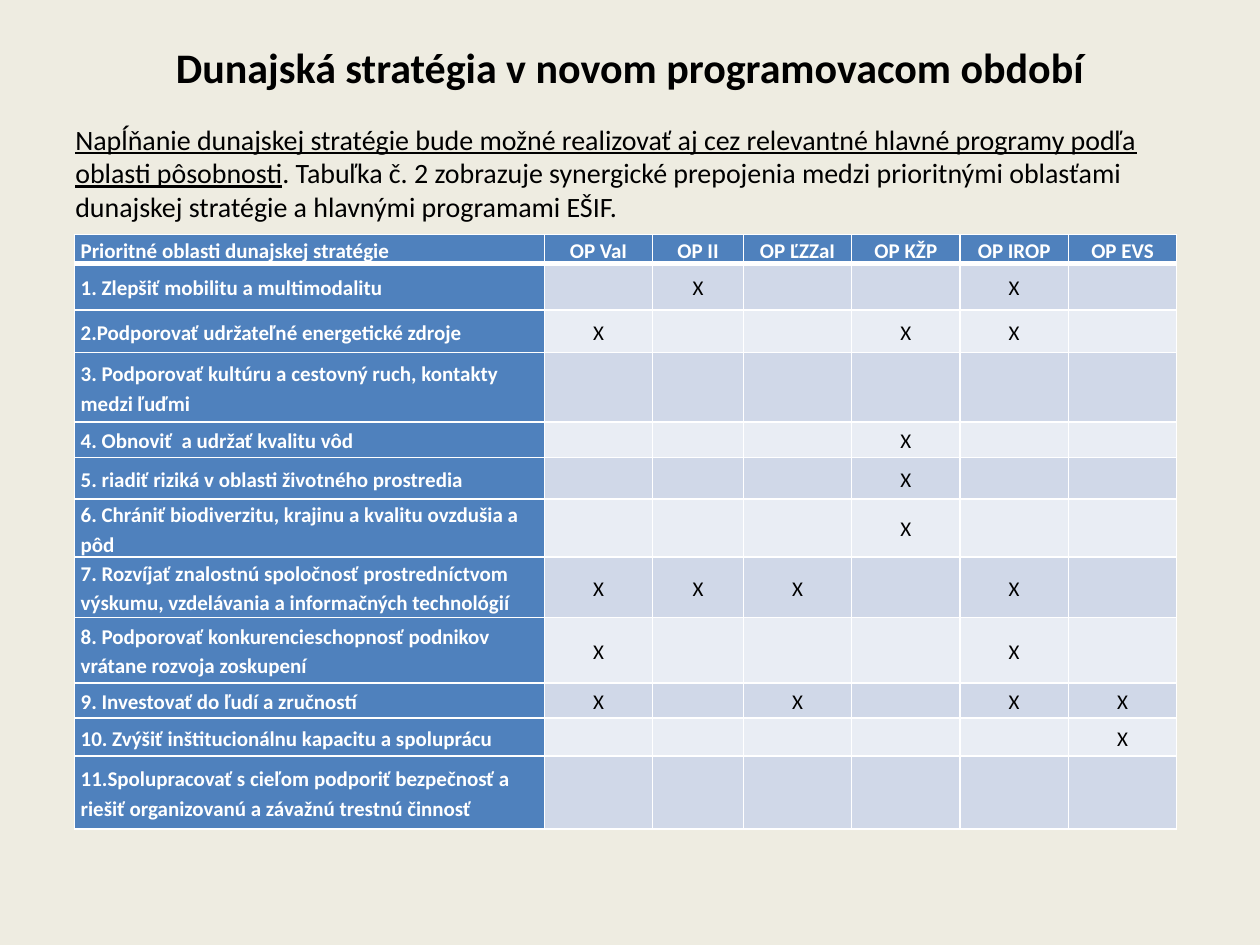
from lxml import etree
from pptx import Presentation
from pptx import util as u
from pptx.dml.color import RGBColor
from pptx.enum import text
from pptx.oxml.ns import qn

CREAM = RGBColor(0xEE, 0xEC, 0xE1)
BLUE = RGBColor(0x4F, 0x81, 0xBD)
BANDS = RGBColor(0xD0, 0xD8, 0xE8), RGBColor(0xE9, 0xED, 0xF4)
WHITE = RGBColor(0xFF, 0xFF, 0xFF)
BLACK = RGBColor(0, 0, 0)
FONT = "Calibri"

TITLE = "Dunajská stratégia v novom programovacom období"
LEAD = ("Napĺňanie dunajskej stratégie bude možné realizovať aj cez relevantné "
        "hlavné programy podľa oblasti pôsobnosti")
REST = (". Tabuľka č. 2 zobrazuje synergické prepojenia medzi prioritnými "
        "oblasťami dunajskej stratégie a hlavnými programami EŠIF.")

HEAD = ["Prioritné oblasti dunajskej stratégie",
        "OP VaI", "OP II", "OP ĽZZaI", "OP KŽP", "OP IROP", "OP EVS"]
WIDTHS = [3.73, 0.86, 0.72, 0.86, 0.86, 0.86, 0.86]
HEAD_HIGH = 0.22
# Row height, priority area, numbers of the programme columns marked X
AREAS = [
    (0.37, "1. Zlepšiť mobilitu a multimodalitu", [2, 5]),
    (0.34, "2.Podporovať udržateľné energetické zdroje", [1, 4, 5]),
    (0.55, "3. Podporovať kultúru a cestovný ruch, kontakty medzi ľuďmi", []),
    (0.28, "4. Obnoviť  a udržať kvalitu vôd", [4]),
    (0.33, "5. riadiť riziká v oblasti životného prostredia", [4]),
    (0.46, "6. Chrániť biodiverzitu, krajinu a kvalitu ovzdušia a pôd", [4]),
    (0.48, "7. Rozvíjať znalostnú spoločnosť prostredníctvom výskumu, "
           "vzdelávania a informačných technológií", [1, 2, 3, 5]),
    (0.52, "8. Podporovať konkurencieschopnosť podnikov vrátane rozvoja "
           "zoskupení", [1, 5]),
    (0.28, "9. Investovať do ľudí a zručností", [1, 3, 5, 6]),
    (0.30, "10. Zvýšiť inštitucionálnu kapacitu a spoluprácu", [6]),
    (0.58, "11.Spolupracovať s cieľom podporiť bezpečnosť a riešiť "
           "organizovanú a závažnú trestnú činnosť", []),
]


def style(run, size, color=BLACK, bold=False, line=False):
    font = run.font
    font.name, font.size = FONT, u.Pt(size)
    font.bold, font.underline = bold, line
    font.color.rgb = color


def add_title(slide):
    title = slide.shapes.title
    title.left, title.top = u.Inches(0.5), u.Inches(0.3)
    title.width, title.height = u.Inches(9), u.Inches(0.46)
    frame = title.text_frame
    frame.text = TITLE
    frame.vertical_anchor = text.MSO_ANCHOR.MIDDLE
    para = frame.paragraphs[0]
    para.alignment = text.PP_ALIGN.CENTER
    style(para.runs[0], 24, bold=True)


def add_intro(slide):
    box = slide.shapes.add_textbox(
        u.Inches(0.5), u.Inches(0.92), u.Inches(9), u.Inches(6.06))
    frame = box.text_frame
    frame.word_wrap = True
    para = frame.paragraphs[0]
    para.space_before = u.Pt(3.2)
    for words, line in ((LEAD, True), (REST, False)):
        run = para.add_run()
        run.text = words
        style(run, 16, line=line)


def set_edges(cell, top, bottom):
    """Draw white borders; top and bottom are widths in points."""
    props = cell._tc.get_or_add_tcPr()
    for side, wide in zip("LRTB", (1, 1, top, bottom)):
        edge = etree.SubElement(props, qn(f"a:ln{side}"), w=str(u.Pt(wide)))
        fill = etree.SubElement(edge, qn("a:solidFill"))
        etree.SubElement(fill, qn("a:srgbClr"), val=str(WHITE))


def fill_cell(cell, words, row, col):
    set_edges(cell, 3 if row == 1 else 1, 3 if row == 0 else 1)
    label = row == 0 or col == 0
    cell.fill.solid()
    cell.fill.fore_color.rgb = BLUE if label else BANDS[(row - 1) % 2]
    cell.margin_left = cell.margin_right = u.Inches(0.05)
    cell.margin_top = cell.margin_bottom = 0
    cell.vertical_anchor = text.MSO_ANCHOR.MIDDLE
    para = cell.text_frame.paragraphs[0]
    para.line_spacing = 1.15
    if col:
        para.alignment = text.PP_ALIGN.CENTER
    else:
        para.alignment = text.PP_ALIGN.LEFT if row else text.PP_ALIGN.JUSTIFY
    if words:
        para.text = words
        style(para.runs[0], 12, WHITE if label else BLACK, label)
    else:
        # Keeps an empty cell from stretching its row
        etree.SubElement(para._p, qn("a:endParaRPr"), sz="1200")


def add_grid(slide):
    highs = [HEAD_HIGH] + [high for high, _, _ in AREAS]
    rows = [HEAD] + [
        [name] + ["X" if col in marks else "" for col in range(1, len(HEAD))]
        for _, name, marks in AREAS]
    table = slide.shapes.add_table(
        len(rows), len(HEAD), u.Inches(0.59), u.Inches(1.86),
        u.Inches(sum(WIDTHS)), u.Inches(sum(highs))).table
    for column, wide in zip(table.columns, WIDTHS):
        column.width = u.Inches(wide)
    for row, (high, line) in enumerate(zip(highs, rows)):
        table.rows[row].height = u.Inches(high)
        for col, words in enumerate(line):
            fill_cell(table.cell(row, col), words, row, col)


def main():
    deck = Presentation()
    deck.slide_width, deck.slide_height = u.Inches(10), u.Inches(7.5)
    slide = deck.slides.add_slide(deck.slide_layouts[5])
    slide.background.fill.solid()
    slide.background.fill.fore_color.rgb = CREAM
    add_title(slide)
    add_intro(slide)
    add_grid(slide)
    deck.save("out.pptx")


if __name__ == "__main__":
    main()
